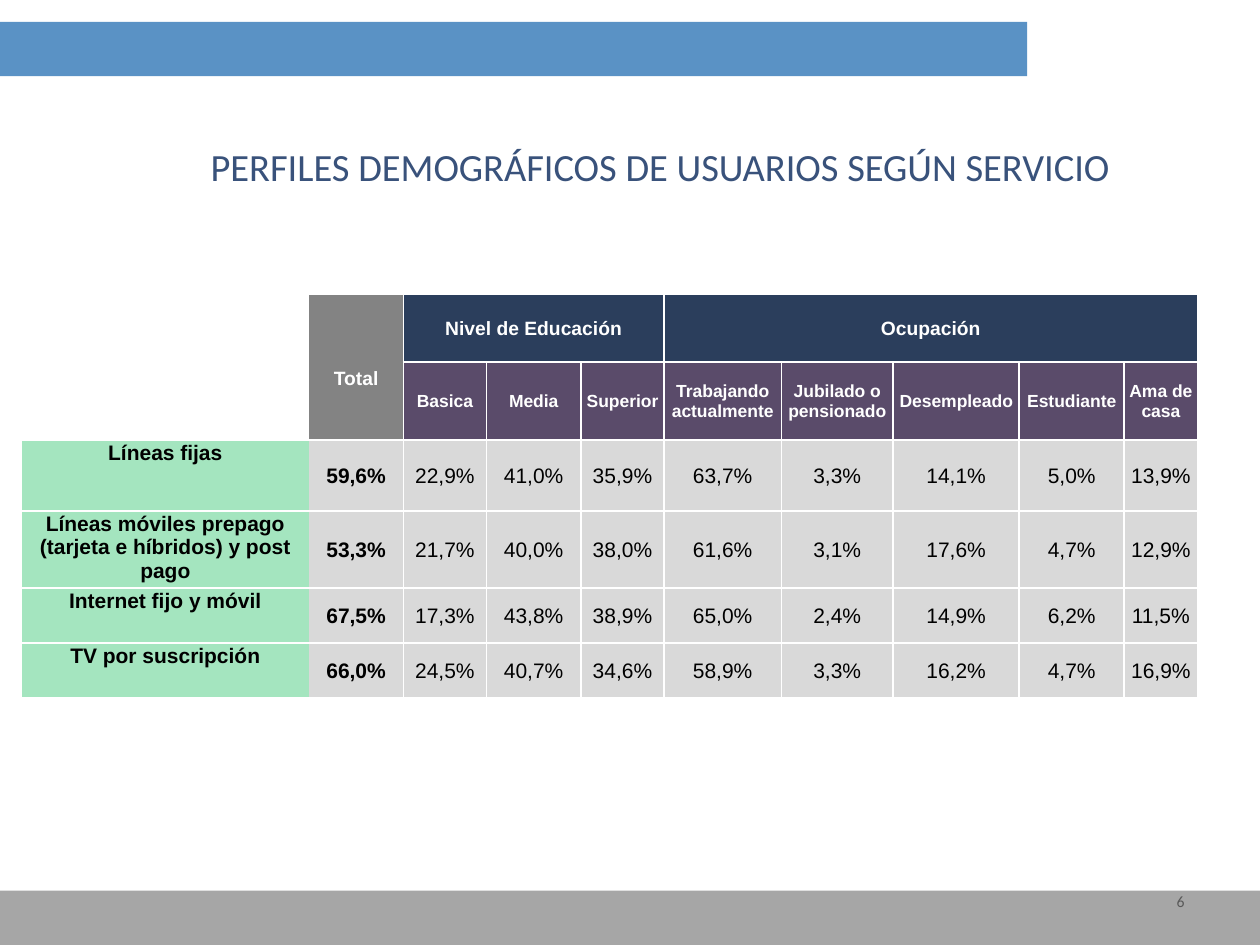
"""Build the slide on demographic profiles of users by service."""
from lxml import etree
from pptx import Presentation
from pptx.dml.color import RGBColor
from pptx.enum import shapes, text
from pptx.oxml import ns
from pptx.util import Pt

WHITE = RGBColor(0xFF, 0xFF, 0xFF)
BLACK = RGBColor(0x00, 0x00, 0x00)
BLUE = RGBColor(0x5A, 0x92, 0xC5)
FOOTER = RGBColor(0xA6, 0xA6, 0xA6)
TITLE = RGBColor(0x39, 0x52, 0x7B)
NUMBER = RGBColor(0x59, 0x59, 0x59)
TOTAL = RGBColor(0x83, 0x83, 0x83)
NAVY = RGBColor(0x2B, 0x3E, 0x5C)
PURPLE = RGBColor(0x5A, 0x4B, 0x6A)
GREEN = RGBColor(0xA4, 0xE5, 0xBF)
GRAY = RGBColor(0xD9, 0xD9, 0xD9)

HEADING = "PERFILES DEMOGRÁFICOS DE USUARIOS SEGÚN SERVICIO"
BARS = [(0, 12.5, 587, 31, BLUE), (0, 509, 720, 31, FOOTER)]
GROUPS = [
    ("Nivel de Educación", ["Basica", "Media", "Superior"]),
    ("Ocupación", ["Trabajando actualmente", "Jubilado o pensionado",
                   "Desempleado", "Estudiante", "Ama de casa"]),
]
SERVICES = [
    ("Líneas fijas", "59,6%", "22,9%", "41,0%", "35,9%", "63,7%", "3,3%",
     "14,1%", "5,0%", "13,9%"),
    ("Líneas móviles prepago (tarjeta e híbridos) y post pago", "53,3%",
     "21,7%", "40,0%", "38,0%", "61,6%", "3,1%", "17,6%", "4,7%", "12,9%"),
    ("Internet fijo y móvil", "67,5%", "17,3%", "43,8%", "38,9%", "65,0%",
     "2,4%", "14,9%", "6,2%", "11,5%"),
    ("TV por suscripción", "66,0%", "24,5%", "40,7%", "34,6%", "58,9%",
     "3,3%", "16,2%", "4,7%", "16,9%"),
]
COLS = [164, 54, 47.5, 54, 47.5, 67, 64, 72, 60, 42]
ROWS = [39, 44.5, 40.5, 40.5, 31.5, 31.5]
TABLE_LEFT, TABLE_TOP = 12.5, 168
MIDDLE = text.MSO_ANCHOR.MIDDLE
TOP = text.MSO_ANCHOR.TOP


def write(tf, content, size, color, font="Arial", bold=False,
          align=text.PP_ALIGN.CENTER, spacing=None):
    p = tf.paragraphs[0]
    p.alignment = align
    p.line_spacing = spacing
    r = p.add_run()
    r.text = content
    r.font.name, r.font.size, r.font.bold = font, Pt(size), bold
    r.font.color.rgb = color


def set_borders(cell, drawn):
    tc_pr = cell._tc.get_or_add_tcPr()
    for side in "LRTB":
        ln = etree.SubElement(tc_pr, ns.qn(f"a:ln{side}"), w=str(Pt(1)))
        if side in drawn:
            fill = etree.SubElement(ln, ns.qn("a:solidFill"))
            etree.SubElement(fill, ns.qn("a:srgbClr"), val=str(WHITE))
        else:
            etree.SubElement(ln, ns.qn("a:noFill"))


def fill_cell(cell, content, fill, size, color, bold=True, anchor=MIDDLE, top=0.72):
    cell.fill.solid()
    cell.fill.fore_color.rgb = fill
    cell.vertical_anchor = anchor
    cell.margin_left = cell.margin_right = Pt(0.72)
    cell.margin_top, cell.margin_bottom = Pt(top), 0
    write(cell.text_frame, content, size, color, bold=bold)


def add_bar(s, left, top, width, height, color):
    sp = s.shapes.add_shape(shapes.MSO_SHAPE.RECTANGLE, Pt(left), Pt(top),
                            Pt(width), Pt(height))
    sp.shadow.inherit = False
    sp.fill.solid()
    sp.fill.fore_color.rgb = color
    sp.line.fill.background()


def add_profiles(s):
    table = s.shapes.add_table(len(ROWS), len(COLS), Pt(TABLE_LEFT), Pt(TABLE_TOP),
                               Pt(sum(COLS)), Pt(sum(ROWS))).table
    table.first_row = table.horz_banding = False
    for column, width in zip(table.columns, COLS):
        column.width = Pt(width)
    for row, height in zip(table.rows, ROWS):
        row.height = Pt(height)
    for r in range(len(ROWS)):
        for c in range(len(COLS)):
            set_borders(table.cell(r, c), {0: "TB", 1: "RTB"}.get(c, "LRTB"))

    for c in (0, 1):
        table.cell(0, c).merge(table.cell(1, c))
    table.cell(0, 0).fill.background()
    fill_cell(table.cell(0, 1), "Total", TOTAL, 11, WHITE, top=13.4)

    first = 2
    for group, names in GROUPS:
        last = first + len(names) - 1
        table.cell(0, first).merge(table.cell(0, last))
        fill_cell(table.cell(0, first), group, NAVY, 11, WHITE)
        for c, name in enumerate(names, first):
            fill_cell(table.cell(1, c), name, PURPLE, 10, WHITE)
        first = last + 1

    for r, (service, *values) in enumerate(SERVICES, 2):
        fill_cell(table.cell(r, 0), service, GREEN, 12, BLACK, anchor=TOP)
        for c, value in enumerate(values, 1):
            fill_cell(table.cell(r, c), value, GRAY, 12, BLACK, bold=c == 1)


def main():
    prs = Presentation()
    prs.slide_width, prs.slide_height = Pt(720), Pt(540)
    s = prs.slides.add_slide(prs.slide_layouts[5])

    title = s.shapes.title
    title.left, title.top, title.width, title.height = Pt(70.5), Pt(64), Pt(613.5), Pt(57)
    title.fill.solid()
    title.fill.fore_color.rgb = WHITE
    title.text_frame.vertical_anchor = MIDDLE
    write(title.text_frame, HEADING, 22, TITLE, font="Calibri", spacing=1.2)

    for bar in BARS:
        add_bar(s, *bar)

    number = s.shapes.add_textbox(Pt(516), Pt(500.5), Pt(168), Pt(29))
    tf = number.text_frame
    tf.word_wrap = True
    tf.vertical_anchor = MIDDLE
    write(tf, "6", 9, NUMBER, font="Calibri", align=text.PP_ALIGN.RIGHT)

    add_profiles(s)
    prs.save("out.pptx")


if __name__ == "__main__":
    main()
